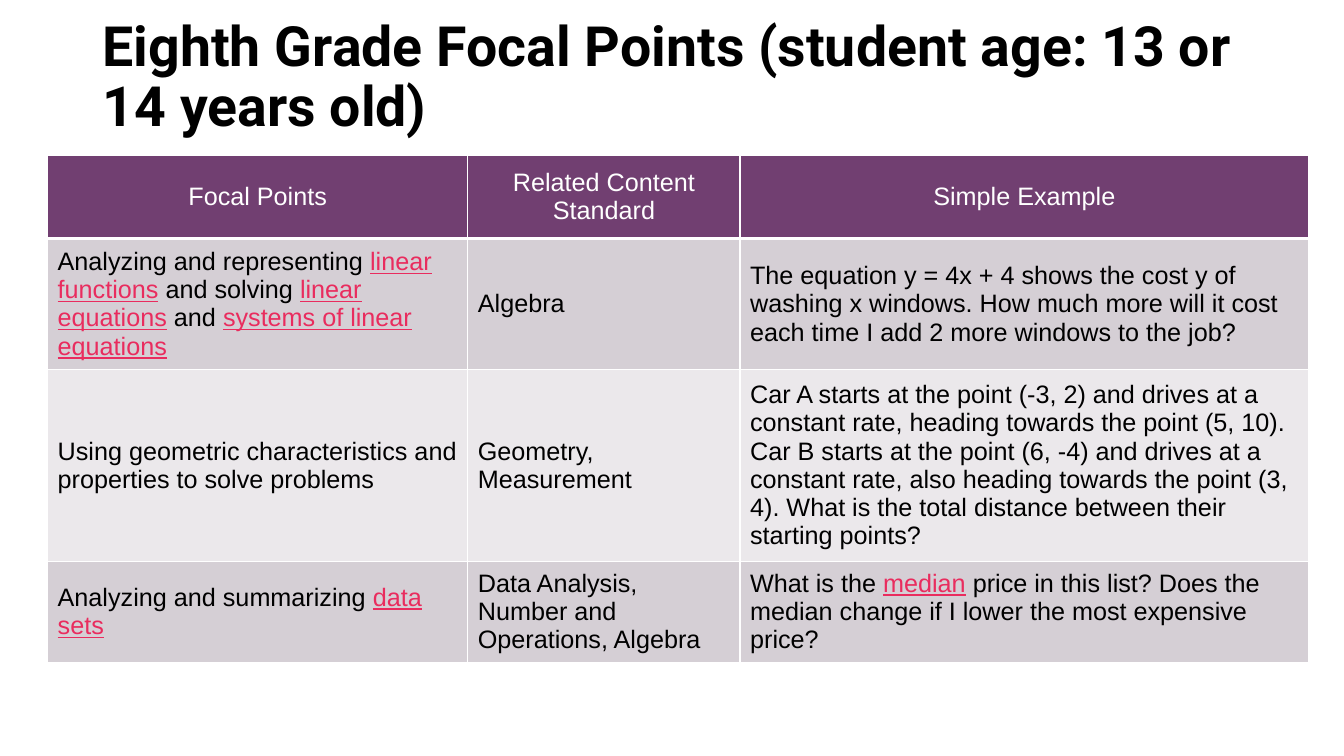
from lxml import etree
from pptx import Presentation
from pptx.dml.color import RGBColor
from pptx.enum.text import MSO_ANCHOR, PP_ALIGN
from pptx.oxml.ns import qn
from pptx.util import Cm, Pt

MIDDLE = MSO_ANCHOR.MIDDLE
LEFT, CENTER = PP_ALIGN.LEFT, PP_ALIGN.CENTER

BLACK = RGBColor(0x00, 0x00, 0x00)
WHITE = RGBColor(0xFF, 0xFF, 0xFF)
PLUM = RGBColor(0x71, 0x3F, 0x71)
MAUVE = RGBColor(0xD5, 0xCF, 0xD5)
PALE_MAUVE = RGBColor(0xEB, 0xE8, 0xEB)
PINK = RGBColor(0xE9, 0x2C, 0x5E)

COLUMN_WIDTHS = [10.59, 6.86, 14.33]
ROW_HEIGHTS = [2.09, 3.1, 4.83, 2.34]

# Terms between bars are underlined in pink.
ROWS = [
    ["Focal Points", "Related Content Standard", "Simple Example"],
    [
        "Analyzing and representing |linear functions| and solving "
        "|linear equations| and |systems of linear equations|",
        "Algebra",
        "The equation y = 4x + 4 shows the cost y of washing x windows. "
        "How much more will it cost each time I add 2 more windows to the job?",
    ],
    [
        "Using geometric characteristics and properties to solve problems",
        "Geometry, Measurement",
        "Car A starts at the point (-3, 2) and drives at a constant rate, "
        "heading towards the point (5, 10). Car B starts at the point (6, -4) "
        "and drives at a constant rate, also heading towards the point (3, 4). "
        "What is the total distance between their starting points?",
    ],
    [
        "Analyzing and summarizing |data sets|",
        "Data Analysis, Number and Operations, Algebra",
        "What is the |median| price in this list? Does the median change "
        "if I lower the most expensive price?",
    ],
]


def write_text(paragraph, text, size=18, font="Arial", color=BLACK, bold=False, align=LEFT):
    """Fill the paragraph, marking every term between bars as a key term."""
    paragraph.alignment = align
    for index, part in enumerate(text.split("|")):
        if not part:
            continue
        is_term = index % 2 == 1
        run = paragraph.add_run()
        run.text = part
        run.font.size = Pt(size)
        run.font.name = font
        run.font.bold = bold
        run.font.underline = is_term
        run.font.color.rgb = PINK if is_term else color


def set_borders(cell, bottom_width):
    """Draw white cell borders, 1 pt except at the bottom."""
    properties = cell._tc.get_or_add_tcPr()
    widths = {"a:lnL": 1, "a:lnR": 1, "a:lnT": 1, "a:lnB": bottom_width}
    for position, (tag, width) in enumerate(widths.items()):
        line = etree.Element(qn(tag), w=str(Pt(width)))
        fill = etree.SubElement(line, qn("a:solidFill"))
        etree.SubElement(fill, qn("a:srgbClr"), val=str(WHITE))
        properties.insert(position, line)


presentation = Presentation()
presentation.slide_width = Cm(33.87)
presentation.slide_height = Cm(19.05)
slide = presentation.slides.add_slide(presentation.slide_layouts[6])

title = slide.shapes.add_textbox(Cm(2.34), Cm(0.53), Cm(29.21), Cm(2.9))
title.text_frame.word_wrap = True
title.text_frame.vertical_anchor = MIDDLE
title_paragraph = title.text_frame.paragraphs[0]
title_paragraph.line_spacing = 0.9
write_text(
    title_paragraph,
    "Eighth Grade Focal Points (student age: 13 or 14 years old)",
    size=39.6,
    font="Roboto",
    bold=True,
)

table = slide.shapes.add_table(
    len(ROW_HEIGHTS), len(COLUMN_WIDTHS), Cm(1.2), Cm(3.92),
    Cm(sum(COLUMN_WIDTHS)), Cm(sum(ROW_HEIGHTS)),
).table
for column, width in zip(table.columns, COLUMN_WIDTHS):
    column.width = Cm(width)
for row, height in zip(table.rows, ROW_HEIGHTS):
    row.height = Cm(height)

for row_index, texts in enumerate(ROWS):
    is_header = row_index == 0
    band = MAUVE if row_index % 2 else PALE_MAUVE
    for column_index, text in enumerate(texts):
        cell = table.cell(row_index, column_index)
        cell.vertical_anchor = MIDDLE
        cell.fill.solid()
        cell.fill.fore_color.rgb = PLUM if is_header else band
        set_borders(cell, bottom_width=3 if is_header else 1)
        write_text(
            cell.text_frame.paragraphs[0],
            text,
            color=WHITE if is_header else BLACK,
            align=CENTER if is_header else LEFT,
        )

presentation.save("out.pptx")
